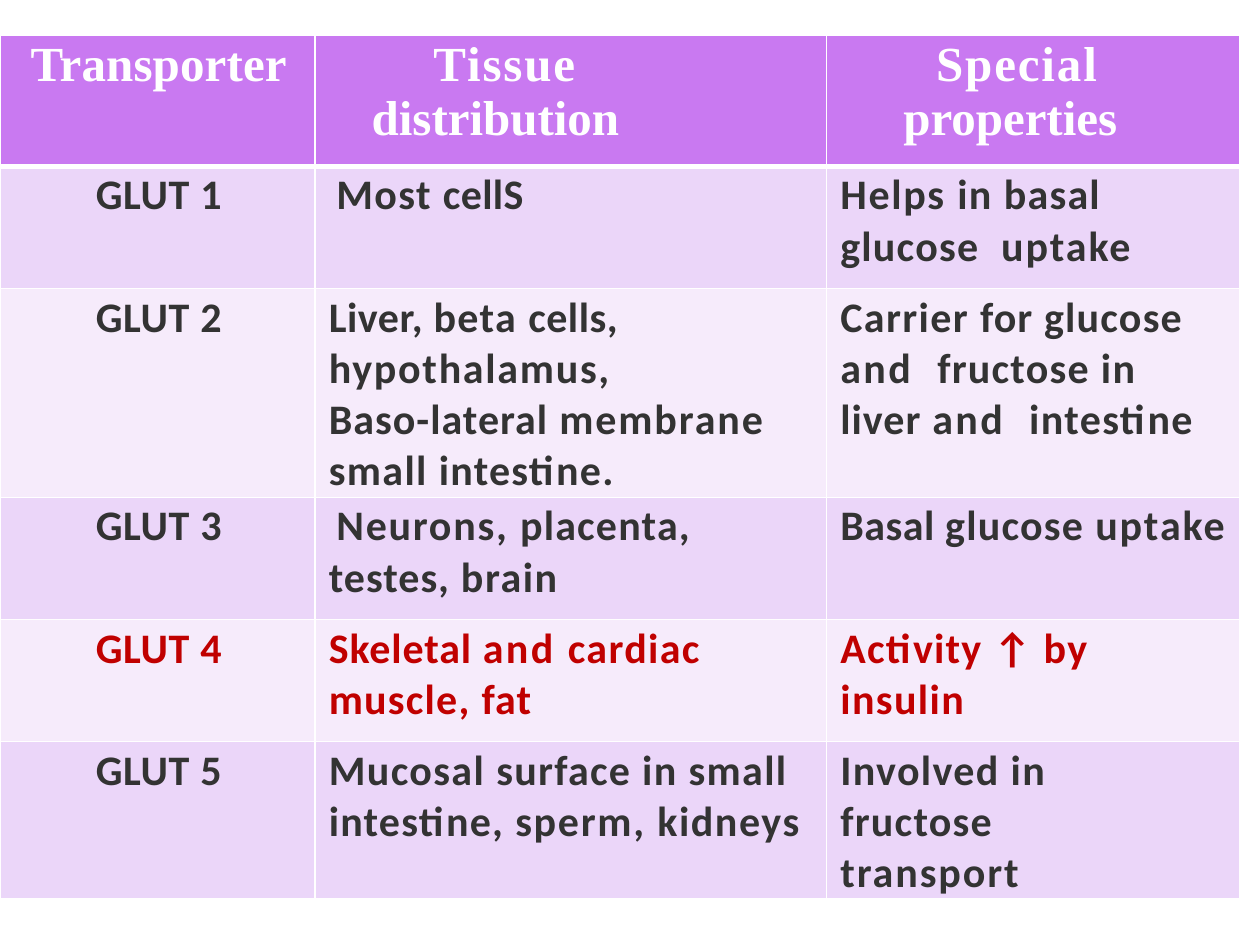
from lxml import etree
from pptx import Presentation
from pptx.dml.color import RGBColor
from pptx.enum import text
from pptx.oxml import ns
from pptx.util import Inches, Pt

COLS = [2.5, 4.06, 3.28]
ROWS = [1.04, 0.97, 1.41, 0.97, 0.97, 0.97]
HEAD, BANDS = "C979F1", ["EBD6F9", "F6EBFB"]
WHITE, DARK, RED = "FFFFFF", "333333", "C00000"
RED_ROW = 4
NAME_LEFT, TEXT_LEFT, SHIFTED_LEFT = 0.02, 0.11, 0.17

# A paragraph is a list of (words, letter spacing in points).
HEADINGS = [
    [("Transporter", 0.1)],
    [("Tissue  ", 1.1), ("distribution", 0)],
    [("Special  ", 1.1), ("properties", 0)],
]
HEADING_INDENTS = [(NAME_LEFT, 0), (0.45, 0.49), (0.61, 0.26)]

# Tissue paragraphs and special property for GLUT 1 to GLUT 5
TRANSPORTERS = [
    ([[("Most ", 0.8), ("cellS", 0.2)]],
     [("Helps ", 1), ("in ", 0.8), ("basal glucose  ", 0.7), ("uptake", 1.1)]),
    ([[("Liver, ", 0.3), ("beta ", 0.8), ("cells,", 0.3)],
      [("hypothalamus,", 1)],
      [("Baso-lateral ", 0.6), ("membrane  ", 1.1), ("small ", 0.8),
       ("intestine.", 0.7)]],
     [("Carrier ", 0.8), ("for ", 0.6), ("glucose ", 0.7), ("and  ", 1.4),
      ("fructose ", 0.7), ("in ", 0.8), ("liver ", 0.6), ("and  ", 1.4),
      ("intestine", 0.8)]),
    ([[("Neurons, ", 1), ("placenta,", 0.7)],
      [("testes, ", 0.6), ("brain", 0.9)]],
     [("Basal ", 0.3), ("glucose ", 0.7), ("uptake", 1.1)]),
    ([[("Skeletal ", 0.5), ("and ", 1.4), ("cardiac  ", 0.8),
       ("muscle, ", 0.7), ("fat", 0.6)]],
     [("Activity ↑ ", 0.7), ("by  ", 0.9), ("insulin", 0.8)]),
    ([[("Mucosal ", 0.8), ("surface ", 0.7), ("in small  ", 0.8),
       ("intestine, ", 0.7), ("sperm, ", 1), ("kidneys", 0.9)]],
     [("Involved in ", 0.8), ("fructose  ", 0.7), ("transport", 1.1)]),
]
SHIFTED_ROWS = {1, 3}
RIGHT_MARGINS = {2: 0.2, 4: 0.2, 5: 0.5}


def rgb(value):
    return RGBColor.from_string(value)


def set_borders(cell, top, bottom):
    """Draw white cell borders, 1 pt at the sides."""
    tc_pr = cell._tc.get_or_add_tcPr()
    sides = [("lnL", 1), ("lnR", 1), ("lnT", top), ("lnB", bottom)]
    for i, (tag, width) in enumerate(sides):
        line = etree.Element(ns.qn(f"a:{tag}"), w=str(Pt(width)))
        fill = etree.SubElement(line, ns.qn("a:solidFill"))
        etree.SubElement(fill, ns.qn("a:srgbClr"), val=WHITE)
        tc_pr.insert(i, line)


def add_text(p, runs, font, size, color, left, indent=0, right=0):
    p_pr = p._p.get_or_add_pPr()
    for key, value in (("marL", left), ("indent", indent), ("marR", right)):
        p_pr.set(key, str(Inches(value)))
    for words, spacing in runs:
        r = p.add_run()
        r.text = words
        r.font.name, r.font.size, r.font.bold = font, Pt(size), True
        r.font.color.rgb = rgb(color)
        r._r.get_or_add_rPr().set("spc", str(round(spacing * 100)))


def start_cell(table, row, col):
    cell = table.cell(row, col)
    cell.margin_left = cell.margin_right = cell.margin_bottom = 0
    cell.margin_top = Inches(0.03 if row else 0.02)
    cell.fill.solid()
    cell.fill.fore_color.rgb = rgb(BANDS[(row - 1) % 2] if row else HEAD)
    set_borders(cell, 3 if row == 1 else 1, 1 if row else 3)
    p = cell.text_frame.paragraphs[0]
    p.space_before = Pt(2.4 if row else 1.8)
    if col == 0:
        p.alignment = text.PP_ALIGN.CENTER
    return cell.text_frame


def main():
    prs = Presentation()
    prs.slide_width, prs.slide_height = Inches(10), Inches(7.5)
    s = prs.slides.add_slide(prs.slide_layouts[6])
    table = s.shapes.add_table(len(ROWS), len(COLS), 0, Inches(0.28),
                               Inches(sum(COLS)), Inches(sum(ROWS))).table
    for column, width in zip(table.columns, COLS):
        column.width = Inches(width)
    for row, height in zip(table.rows, ROWS):
        row.height = Inches(height)

    for col, (runs, (left, indent)) in enumerate(zip(HEADINGS, HEADING_INDENTS)):
        tf = start_cell(table, 0, col)
        add_text(tf.paragraphs[0], runs, "Times New Roman", 28, WHITE, left, indent)

    for row, (tissues, special) in enumerate(TRANSPORTERS, start=1):
        name = [("GLUT ", 0.4), (str(row), 0)]
        for col, paragraphs in enumerate([[name], tissues, [special]]):
            tf = start_cell(table, row, col)
            for i, runs in enumerate(paragraphs):
                p = tf.add_paragraph() if i else tf.paragraphs[0]
                left = TEXT_LEFT if col else NAME_LEFT
                if col == 1 and i == 0 and row in SHIFTED_ROWS:
                    left = SHIFTED_LEFT
                right = RIGHT_MARGINS.get(row, 0) if col == 2 else 0
                add_text(p, runs, "Calibri", 24, RED if row == RED_ROW else DARK,
                         left, right=right)

    prs.save("out.pptx")


if __name__ == "__main__":
    main()
